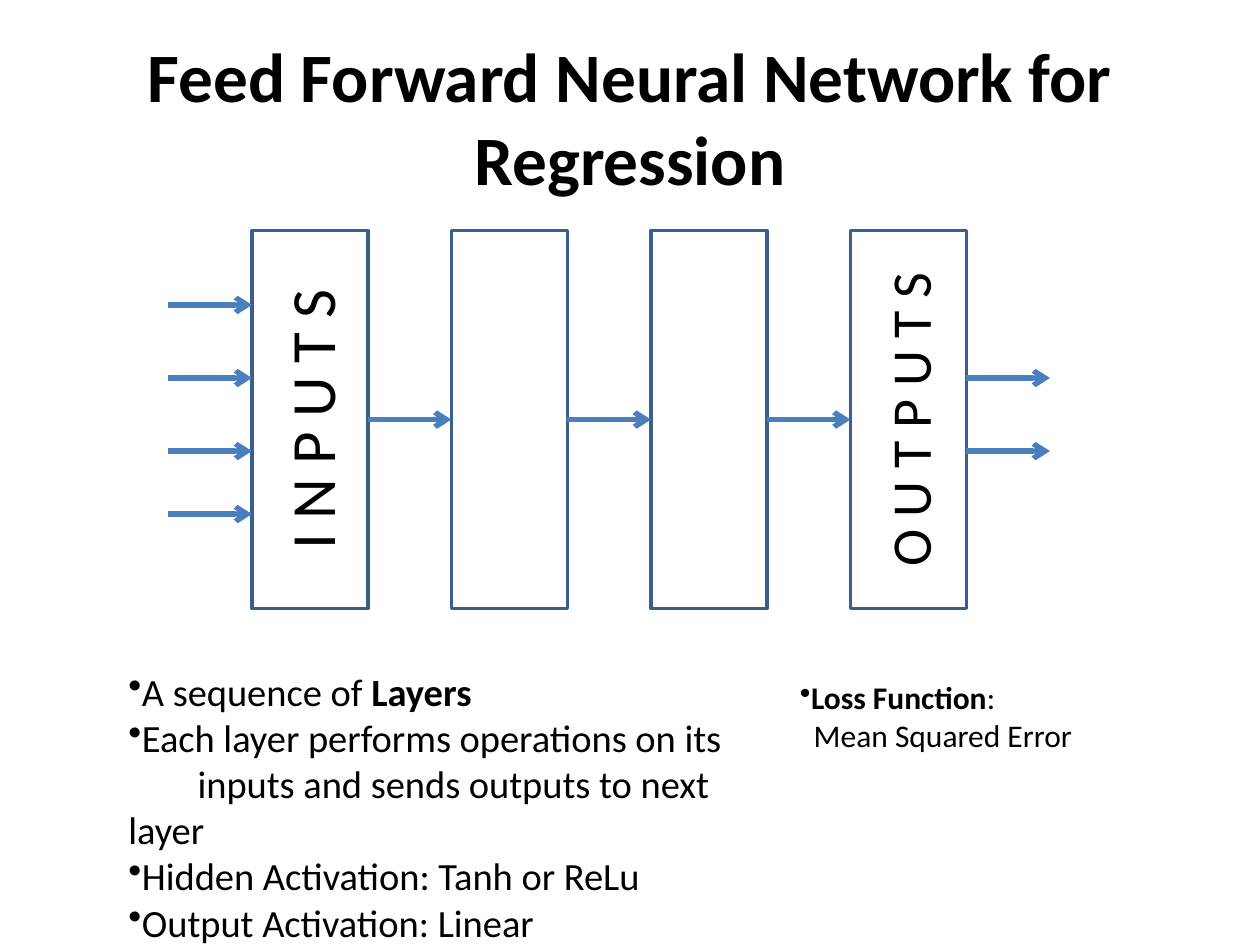
from dataclasses import dataclass

from lxml import etree
from pptx import Presentation
from pptx import util as u
from pptx.dml.color import RGBColor
from pptx.enum import shapes, text
from pptx.oxml.ns import qn


@dataclass(frozen=True)
class Theme:
    font: str = "Calibri"
    ink: str = "000000"
    paper: str = "FFFFFF"
    border: str = "3A5F8C"
    arrow: str = "4B7EBC"
    border_width: float = 2
    arrow_width: float = 3
    title_size: float = 39.6
    input_size: float = 36
    output_size: float = 32
    body_size: float = 22
    loss_size: float = 18


class NetworkSlide:
    """Draws the styled elements of one slide."""

    def __init__(self, slide, theme):
        self.slide = slide
        self.theme = theme

    def style_run(self, run, size, bold=False):
        run.font.name = self.theme.font
        run.font.size = u.Pt(size)
        run.font.bold = bold
        run.font.color.rgb = RGBColor.from_string(self.theme.ink)

    def title(self, wording, left, top, width, height):
        heading = self.slide.shapes.title
        heading.left, heading.top = u.Inches(left), u.Inches(top)
        heading.width, heading.height = u.Inches(width), u.Inches(height)
        frame = heading.text_frame
        frame.text = wording
        frame.auto_size = text.MSO_AUTO_SIZE.NONE
        frame.vertical_anchor = text.MSO_ANCHOR.MIDDLE
        frame.paragraphs[0].alignment = text.PP_ALIGN.CENTER
        self.style_run(frame.paragraphs[0].runs[0], self.theme.title_size, True)

    def layer(self, left, top, width, height, label="", size=None):
        block = self.slide.shapes.add_shape(
            shapes.MSO_SHAPE.RECTANGLE,
            u.Inches(left), u.Inches(top), u.Inches(width), u.Inches(height))
        block.shadow.inherit = False
        block.fill.solid()
        block.fill.fore_color.rgb = RGBColor.from_string(self.theme.paper)
        block.line.color.rgb = RGBColor.from_string(self.theme.border)
        block.line.width = u.Pt(self.theme.border_width)
        if label:
            frame = block.text_frame
            frame.text = label
            frame.vertical_anchor = text.MSO_ANCHOR.MIDDLE
            frame._txBody.bodyPr.set("vert", "vert270")
            frame.paragraphs[0].alignment = text.PP_ALIGN.CENTER
            self.style_run(frame.paragraphs[0].runs[0], size)
        return block

    def arrow(self, start, end, y, source=None, target=None):
        link = self.slide.shapes.add_connector(
            shapes.MSO_CONNECTOR.STRAIGHT,
            u.Inches(start), u.Inches(y), u.Inches(end), u.Inches(y))
        if source is not None:
            link.begin_connect(source, 3)
        if target is not None:
            link.end_connect(target, 1)
        link.line.color.rgb = RGBColor.from_string(self.theme.arrow)
        link.line.width = u.Pt(self.theme.arrow_width)
        etree.SubElement(link.line._get_or_add_ln(), qn("a:tailEnd"), type="arrow")
        etree.SubElement(link._element.spPr, qn("a:effectLst"))

    def notes(self, left, top, width, height, size, lines, wrap=True):
        box = self.slide.shapes.add_textbox(
            u.Inches(left), u.Inches(top), u.Inches(width), u.Inches(height))
        frame = box.text_frame
        frame.word_wrap = wrap
        frame.auto_size = text.MSO_AUTO_SIZE.SHAPE_TO_FIT_TEXT
        for index, (bulleted, indent, parts) in enumerate(lines):
            paragraph = frame.paragraphs[0] if index == 0 else frame.add_paragraph()
            properties = paragraph._p.get_or_add_pPr()
            properties.set("marL", "0")
            properties.set("indent", str(u.Inches(indent)))
            if bulleted:
                etree.SubElement(properties, qn("a:buChar"), char="•")
            for wording, bold in parts:
                run = paragraph.add_run()
                run.text = wording
                self.style_run(run, size, bold)


def main():
    theme = Theme()
    deck = Presentation()
    deck.slide_width, deck.slide_height = u.Inches(10), u.Inches(7.5)
    page = NetworkSlide(deck.slides.add_slide(deck.slide_layouts[5]), theme)
    page.title("Feed Forward Neural Network for Regression", 0.5, 0.3, 9, 1.25)

    first, top, width, height = 2, 1.83, 0.92, 3
    pitch = 4.75 / 3
    gap = pitch - width
    labels = [("I N P U T S", theme.input_size), ("", None), ("", None),
              ("O U T P U T S", theme.output_size)]
    layers = [page.layer(first + i * pitch, top, width, height, label, size)
              for i, (label, size) in enumerate(labels)]

    for i, (source, target) in enumerate(zip(layers, layers[1:])):
        right = first + i * pitch + width
        page.arrow(right, right + gap, top + height / 2, source, target)
    for y in (2.42, 3, 3.58, 4.08):
        page.arrow(first - gap, first, y)
    network_end = first + 3 * pitch + width
    for y in (3, 3.58):
        page.arrow(network_end, network_end + gap, y)

    page.notes(0.92, 5.25, 5, 1.95, theme.body_size, [
        (True, 0, [("A sequence of ", False), ("Layers", True)]),
        (True, 0, [("Each layer performs operations on its", False)]),
        (False, 0.55, [("inputs and sends outputs to next layer", False)]),
        (True, 0, [("Hidden Activation: Tanh or ReLu", False)]),
        (True, 0, [("Output Activation: Linear", False)]),
    ])
    page.notes(6.25, 5.33, 2.39, 0.71, theme.loss_size, [
        (True, 0, [("Loss Function", True), (":", False)]),
        (False, 0.11, [("Mean Squared Error", False)]),
    ], wrap=False)
    deck.save("out.pptx")


if __name__ == "__main__":
    main()
